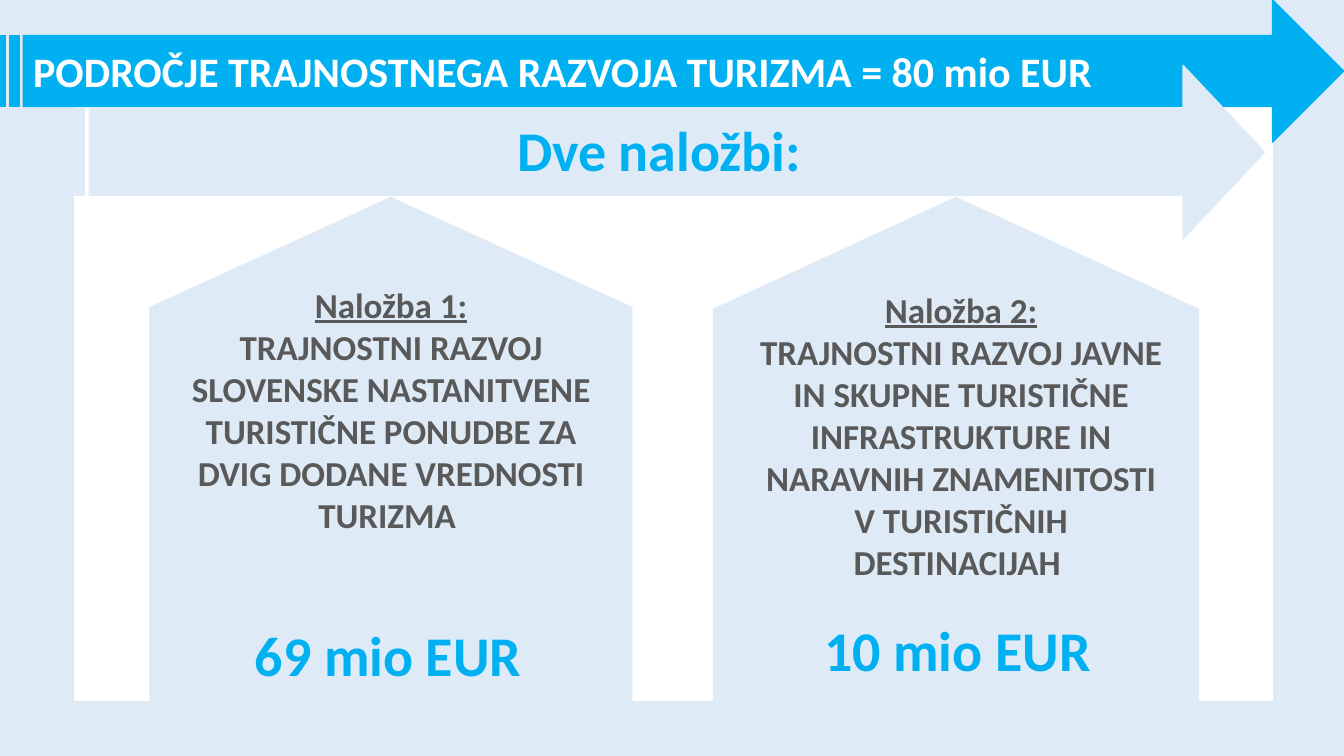
from pptx import Presentation
from pptx import util as u
from pptx.dml.color import RGBColor
from pptx.enum import shapes, text

PALE, WHITE, BLUE, GREY = "DEEBF7", "FFFFFF", "00B0F0", "595959"
KIND = shapes.MSO_SHAPE
ALIGN = text.PP_ALIGN

TITLE = "PODROČJE TRAJNOSTNEGA RAZVOJA TURIZMA = 80 mio EUR"
TITLE_BOX = (0.58, 0, 30, 3.58)
SUBTITLE = "Dve naložbi:"
SUBTITLE_BOX = (12.78, 2.79, 8, 1.96)

# Boxes are left, top, width, height in cm
BACKDROP = [
    (KIND.RECTANGLE, (0, 0, 33.87, 19.05), PALE),
    (KIND.FLOWCHART_PROCESS, (1.88, 1.65, 30.18, 16), WHITE),
    (KIND.STRIPED_RIGHT_ARROW, (0.03, 0, 33.83, 3.58), BLUE),
    (KIND.STRIPED_RIGHT_ARROW, (1.57, 1.65, 30.3, 4.37), PALE),
]
INVESTMENTS = [
    {
        "house": (3.78, 4.98, 12.14, 13.84),
        "heading": "Naložba 1:",
        "description": "TRAJNOSTNI RAZVOJ SLOVENSKE NASTANITVENE TURISTIČNE "
                       "PONUDBE ZA DVIG DODANE VREDNOSTI TURIZMA ",
        "description_box": (4.47, 7.01, 10.77, 7.75),
        "amount": "69 mio EUR",
        "amount_box": (6.17, 15.52, 9.32, 1.96),
    },
    {
        "house": (17.98, 4.98, 12.22, 14.07),
        "heading": "Naložba 2:",
        "description": "TRAJNOSTNI RAZVOJ JAVNE IN SKUPNE TURISTIČNE "
                       "INFRASTRUKTURE IN NARAVNIH ZNAMENITOSTI V "
                       "TURISTIČNIH DESTINACIJAH ",
        "description_box": (18.77, 7.14, 10.9, 9.88),
        "amount": "10 mio EUR",
        "amount_box": (20.52, 15.39, 7.42, 1.96),
    },
]


def colour(value):
    return RGBColor.from_string(value)


def add_block(slide, kind, box, fill, rotation=0):
    block = slide.shapes.add_shape(kind, *map(u.Cm, box))
    block.shadow.inherit = False
    block.rotation = rotation
    block.fill.solid()
    block.fill.fore_color.rgb = colour(fill)
    block.line.color.rgb = colour(fill)
    block.line.width = u.Pt(1)
    return block


def write(frame, lines, size, shade, align=ALIGN.LEFT):
    """Fill a frame with (wording, underlined) lines."""
    frame.word_wrap = True
    frame.auto_size = text.MSO_AUTO_SIZE.NONE
    for index, (wording, underlined) in enumerate(lines):
        line = frame.add_paragraph() if index else frame.paragraphs[0]
        line.alignment = align
        line.line_spacing = 1.0
        run = line.add_run()
        run.text = wording
        run.font.color.rgb = colour(shade)
        look = {"name": "Calibri", "size": u.Pt(size), "bold": True,
                "underline": underlined}
        for name, value in look.items():
            setattr(run.font, name, value)


def add_label(slide, box, *style):
    label = slide.shapes.add_textbox(*map(u.Cm, box))
    write(label.text_frame, *style)


def main():
    deck = Presentation()
    deck.slide_width, deck.slide_height = u.Cm(33.87), u.Cm(19.05)
    slide = deck.slides.add_slide(deck.slide_layouts[5])

    # Background, panel and the two arrows
    blocks = [add_block(slide, *part) for part in BACKDROP]
    blocks[-1].adjustments[1] = 0.47

    # Title, brought in front of its arrow
    title = slide.shapes.title
    for name, value in zip(("left", "top", "width", "height"), TITLE_BOX):
        setattr(title, name, u.Cm(value))
    title.text_frame.vertical_anchor = text.MSO_ANCHOR.MIDDLE
    write(title.text_frame, [(TITLE, False)], 30, WHITE)
    blocks[-1]._element.addnext(title._element)
    add_label(slide, SUBTITLE_BOX, [(SUBTITLE, False)], 40, BLUE)

    # Investments
    for item in INVESTMENTS:
        add_block(slide, KIND.FLOWCHART_OFFPAGE_CONNECTOR, item["house"],
                  PALE, 180)
        add_label(slide, item["description_box"],
                  [(item["heading"], True), (item["description"], False)],
                  25, GREY, ALIGN.CENTER)
        add_label(slide, item["amount_box"], [(item["amount"], False)],
                  40, BLUE)

    deck.save("out.pptx")


if __name__ == "__main__":
    main()
